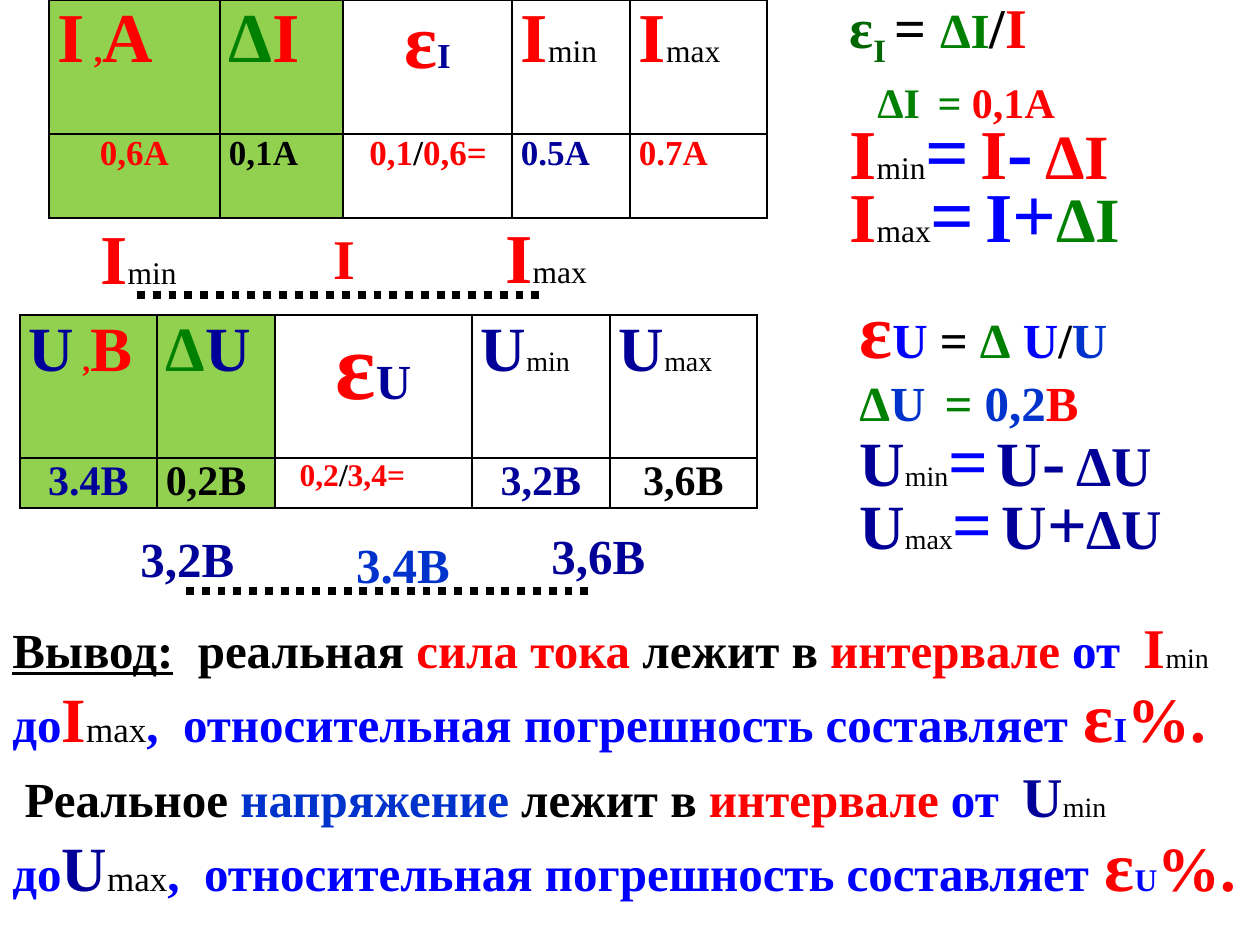
from lxml import etree
from pptx import Presentation
from pptx.dml.color import RGBColor
from pptx.enum.dml import MSO_LINE
from pptx.enum.shapes import MSO_CONNECTOR
from pptx.enum.text import MSO_ANCHOR, MSO_AUTO_SIZE, PP_ALIGN
from pptx.oxml import parse_xml
from pptx.oxml.ns import nsdecls, qn
from pptx.util import Pt

PX = 914400 / 126
COLORS = {"black": "000000", "red": "FF0000", "green": "008000", "forest": "006600",
          "blue": "0000FF", "navy": "000099", "royal": "0033CC", "lime": "92D050"}


def write(paragraph, runs, align=PP_ALIGN.LEFT, spacing=None):
    paragraph.alignment = align
    if spacing:
        paragraph.line_spacing = Pt(spacing)
    for text, size, color in runs:
        run = paragraph.add_run()
        run.text = text
        run.font.name = "Times New Roman"
        run.font.size = Pt(size)
        run.font.bold = text not in ("min", "max")
        run.font.color.rgb = RGBColor.from_string(COLORS[color])


def add_text(box, lines, wrap=True, align=PP_ALIGN.LEFT, spacing=None, anchor=MSO_ANCHOR.TOP):
    frame = slide.shapes.add_textbox(*[int(v * PX) for v in box]).text_frame
    frame.word_wrap = wrap
    frame.auto_size = MSO_AUTO_SIZE.SHAPE_TO_FIT_TEXT
    frame.vertical_anchor = anchor
    for i, runs in enumerate(lines):
        write(frame.add_paragraph() if i else frame.paragraphs[0], runs, align, spacing)
    return frame


prs = Presentation()
prs.slide_width, prs.slide_height = int(1260 * PX), int(945 * PX)
slide = prs.slides.add_slide(prs.slide_layouts[6])

current_rows = [
    [[("I", 40, "red"), (" ,", 20, "red"), ("А", 40, "red")],
     [("Δ", 40, "green"), ("I", 40, "red")],
     [("ε", 44, "red"), ("I", 20, "navy")],
     [("I", 40, "red"), ("min", 18, "black")],
     [("I", 40, "red"), ("max", 18, "black")]],
    [[("0,6А", 20, "red")],
     [("0,1А", 20, "black")],
     [("  0,1", 20, "red"), ("/", 20, "black"), ("0,6=", 20, "red")],
     [("0.5A", 20, "navy")],
     [("0.7A", 20, "red")]],
]
voltage_rows = [
    [[("U", 36, "navy"), (" ,", 18, "red"), ("В", 36, "red")],
     [("Δ", 36, "green"), ("U", 36, "navy")],
     [("ε", 54, "red"), ("U", 28, "navy")],
     [("U", 36, "navy"), ("min", 16, "black")],
     [("U", 36, "navy"), ("max", 16, "black")]],
    [[("3.4В", 24, "navy")],
     [("0,2В", 24, "black")],
     [("  0,2", 18, "red"), ("/", 18, "black"), ("3,4=", 18, "red")],
     [("3,2В", 24, "navy")],
     [("3,6В", 24, "black")]],
]
measurements = [
    (49, 0, [171, 123, 169, 118, 137], [134, 84], current_rows, [(0, 2), (1, 0)]),
    (20, 315, [137, 118, 197, 138, 147], [143, 50], voltage_rows,
     [(0, 2), (1, 0), (1, 3), (1, 4)]),
]
for left, top, widths, heights, rows, centred in measurements:
    table = slide.shapes.add_table(
        len(heights), len(widths), int(left * PX), int(top * PX),
        int(sum(widths) * PX), int(sum(heights) * PX)).table
    table.first_row = table.horz_banding = False
    for column, width in zip(table.columns, widths):
        column.width = int(width * PX)
    for r, row in enumerate(rows):
        table.rows[r].height = int(heights[r] * PX)
        for c, runs in enumerate(row):
            cell = table.cell(r, c)
            cell.margin_left = cell.margin_right = int(9 * PX)
            cell.margin_top = cell.margin_bottom = 0
            for side in ("lnL", "lnR", "lnT", "lnB"):
                cell._tc.get_or_add_tcPr().append(parse_xml(
                    f'<a:{side} {nsdecls("a")} w="12700"><a:solidFill>'
                    f'<a:srgbClr val="{COLORS["black"]}"/></a:solidFill></a:{side}>'))
            if c < 2:
                cell.fill.solid()
                cell.fill.fore_color.rgb = RGBColor.from_string(COLORS["lime"])
            else:
                cell.fill.background()
            write(cell.text_frame.paragraphs[0], runs,
                  PP_ALIGN.CENTER if (r, c) in centred else PP_ALIGN.LEFT)

current_formulas = add_text((837, 0, 423, 267), [
    [("ε", 32, "forest"), ("I ", 32, "forest"), ("= ", 32, "black"), ("ΔI", 28, "green"),
     ("/", 32, "black"), ("I", 32, "red")],
    [("  ", 32, "black"), ("ΔI", 24, "green"), (" ", 40, "green"), ("= ", 24, "green"),
     ("0,1A", 24, "red")],
    [("I", 40, "red"), ("min", 18, "black"), ("=", 44, "blue"), (" ", 24, "blue"),
     ("I", 40, "red"), ("-", 44, "blue"), (" ", 28, "green"), ("ΔI", 36, "red")],
    [("I", 40, "red"), ("max", 18, "black"), ("=", 44, "blue"), (" ", 24, "blue"),
     ("I", 40, "blue"), ("+", 44, "blue"), ("ΔI", 36, "green")],
], spacing=36)
current_formulas.paragraphs[0].runs[1].font._element.set("baseline", "-25000")

add_text((847, 305, 394, 267), [
    [("ε", 44, "red"), ("U ", 28, "blue"), ("=", 28, "black"), (" Δ", 28, "green"),
     (" U", 28, "blue"), ("/", 28, "black"), ("U", 28, "royal")],
    [("Δ", 28, "green"), ("U", 28, "royal"), (" ", 44, "green"), ("= ", 28, "green"),
     ("0,2", 28, "royal"), ("В", 28, "red")],
    [("U", 36, "navy"), ("min", 16, "black"), ("=", 40, "blue"), (" ", 20, "blue"),
     ("U", 36, "navy"), ("-", 40, "navy"), (" ", 24, "navy"), ("ΔU", 32, "navy")],
    [("U", 36, "navy"), ("max", 16, "black"), ("=", 40, "blue"), (" ", 20, "blue"),
     ("U", 36, "navy"), ("+", 40, "navy"), ("ΔU", 32, "navy")],
], spacing=36)

for left, right, y in [(137, 542, 295), (186, 591, 591)]:
    interval = slide.shapes.add_connector(
        MSO_CONNECTOR.STRAIGHT, *[int(v * PX) for v in (left, y, right, y)])
    interval.line.color.rgb = RGBColor.from_string(COLORS["black"])
    interval.line.width = Pt(4.5)
    interval.line.dash_style = MSO_LINE.ROUND_DOT
    etree.SubElement(interval._element.spPr, qn("a:effectLst"))

interval_labels = [
    ((320, 217, 48, 81), [("I", 32, "red")], PP_ALIGN.CENTER),
    ((88, 208, 102, 97), [("I", 40, "red"), ("min", 18, "black")], PP_ALIGN.LEFT),
    ((493, 207, 108, 97), [("I", 40, "red"), ("max", 18, "black")], PP_ALIGN.LEFT),
    ((343, 528, 120, 72), [("3.4В", 28, "royal")], PP_ALIGN.CENTER),
    ((128, 522, 120, 72), [("3,2В", 28, "navy")], PP_ALIGN.LEFT),
    ((539, 519, 120, 72), [("3,6В", 28, "navy")], PP_ALIGN.LEFT),
]
for box, runs, align in interval_labels:
    add_text(box, [runs], wrap=False, align=align)

current_opening = [("Вывод:", 28, "black"), ("  реальная", 28, "black"),
                   (" сила тока ", 28, "red")]
voltage_opening = [(" ", 28, "red"), ("Реальное ", 28, "black"), ("напряжение ", 28, "royal")]
conclusions = [(610, current_opening, "I", "red", 20), (759, voltage_opening, "U", "navy", 18)]
for top, opening, symbol, color, index_size in conclusions:
    conclusion = add_text((0, top, 1260, 154), [opening + [
        ("лежит в ", 28, "black"), ("интервале", 28, "red"), (" от", 28, "blue"),
        (" ", 54, "black"), (symbol, 32, color), ("min", 16, "black"),
        (" до", 28, "blue"), (symbol, 36, color), ("max", 20, "black"),
        (",  относительная погрешность составляет", 28, "blue"), (" ", 36, "red"),
        ("ε", 40, "red"), (symbol, index_size, "blue"), ("%.", 36, "red"),
    ]], spacing=40, anchor=MSO_ANCHOR.MIDDLE)
    if opening is current_opening:
        conclusion.paragraphs[0].runs[0].font.underline = True

prs.save("out.pptx")
